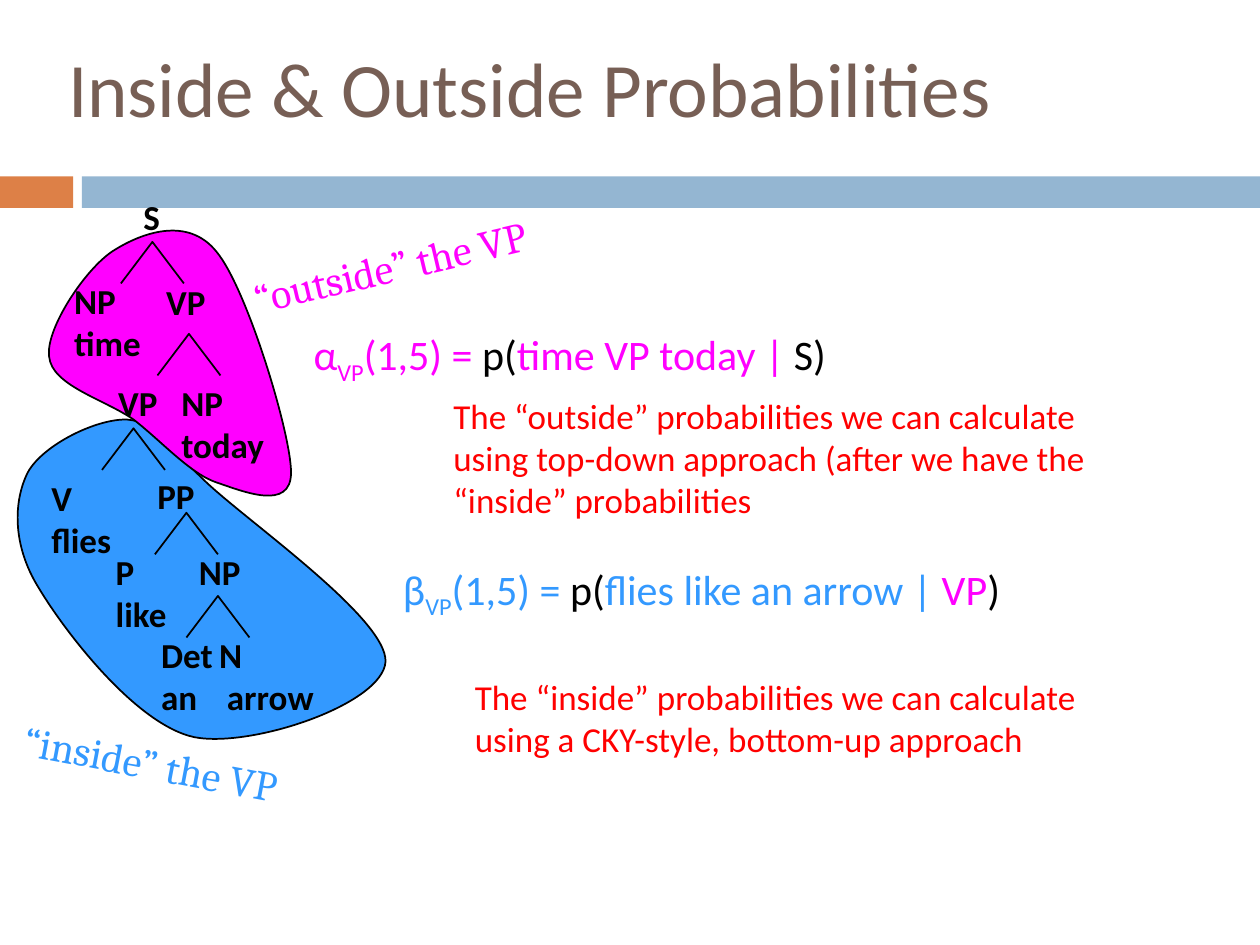
from collections import namedtuple

from lxml.etree import SubElement
from pptx import Presentation
from pptx.dml.color import RGBColor
from pptx.enum.shapes import MSO_SHAPE as Preset
from pptx.enum.text import MSO_ANCHOR, MSO_AUTO_SIZE as AutoSize, PP_ALIGN
from pptx.oxml.ns import qn
from pptx.util import Inches, Pt

# Grid: 100 columns by 75 rows of a tenth of an inch
COLS, ROWS, CELL = 100, 75, 0.1
COLOURS = {
    "title": "775F55", "accent": "DD8047", "band": "94B6D2",
    "inside": "3399FF", "outside": "FF00FF", "note": "FF0000", "ink": "000000",
}
BODY, LABEL = "Calibri", "Cambria"
BRANCH_W, BRANCH_H = 5, 3.3

Box = namedtuple("Box", "left top width height")


def rgb(name):
    return RGBColor.from_string(COLOURS[name])


def cells(count):
    return Inches(count * CELL)


def within(box, left, top, width, height):
    """Place a part in a box, all in grid cells."""
    return [cells(n) for n in (box.left + left, box.top + top, width, height)]


def set_font(font, size, colour=None, name=BODY, bold=False):
    font.name, font.size, font.bold = name, Pt(size), bold
    if colour:
        font.color.rgb = rgb(colour)


def add_text(slide, place, lines, size, colour=None, name=BODY,
             bold=False, wrap=False, angle=0):
    text_box = slide.shapes.add_textbox(*place)
    text_box.rotation = angle
    frame = text_box.text_frame
    frame.word_wrap = wrap
    frame.auto_size = AutoSize.SHAPE_TO_FIT_TEXT
    frame.text = lines
    for paragraph in frame.paragraphs:
        set_font(paragraph.font, size, colour, name, bold)
    return frame


def add_outline(slide, box, points, fill=None):
    """Draw a closed filled outline, or an open line when there is no fill."""
    placed = [(cells(box.left + x), cells(box.top + y)) for x, y in points]
    builder = slide.shapes.build_freeform(*placed[0])
    builder.add_line_segments(placed[1:], close=fill is not None)
    outline = builder.convert_to_shape()
    outline.shadow.inherit = False
    outline.line.color.rgb = rgb("ink")
    outline.line.width = Pt(1)
    if fill:
        outline.fill.solid()
        outline.fill.fore_color.rgb = rgb(fill)
    else:
        outline.fill.background()
    return outline


def round_off(outline):
    """Turn each three straight segments into one cubic curve."""
    segments = list(outline._element.iter(qn("a:lnTo")))
    track = segments[0].getparent()
    close = track.find(qn("a:close"))
    for first in range(0, len(segments), 3):
        curve = SubElement(track, qn("a:cubicBezTo"))
        for segment in segments[first:first + 3]:
            curve.append(segment[0])
            track.remove(segment)
    track.append(close)


def add_header(slide, box):
    # Two-colour band
    accent_w, band_left, band_h = 5.8, 6.5, 2.5
    for left, width, colour in ((0, accent_w, "accent"),
                                (band_left, box.width - band_left, "band")):
        bar = slide.shapes.add_shape(
            Preset.RECTANGLE, *within(box, left, box.height - band_h, width, band_h))
        bar.shadow.inherit = False
        bar.fill.solid()
        bar.fill.fore_color.rgb = rgb(colour)
        bar.line.fill.background()

    # Title
    title = slide.shapes.title
    title.left, title.top, title.width, title.height = within(box, 4.4, 0.6, 93.1, 12.5)
    frame = title.text_frame
    frame.text = "Inside & Outside Probabilities"
    frame.vertical_anchor = MSO_ANCHOR.MIDDLE
    frame.paragraphs[0].alignment = PP_ALIGN.LEFT
    set_font(frame.paragraphs[0].font, 44, "title")


def add_parse_tree(slide, box):
    # Regions inside and outside the lower VP: a start, then three points a curve
    regions = (
        ("inside", [
            (10.1, 18.3),
            (7.7, 18.2), (3.4, 20.3), (2.2, 22.5),
            (1.1, 24.7), (0.9, 28.2), (3.1, 31.7),
            (5.2, 35.2), (10.8, 42.5), (15.4, 43.5),
            (19.9, 44.4), (30.4, 40.9), (30.6, 37.5),
            (30.7, 34.1), (19.8, 26.5), (16.4, 23.3),
            (13, 20.1), (12.4, 18.5), (10.1, 18.3)]),
        ("outside", [
            (17.2, 23.3),
            (19.3, 24), (23.1, 25.6), (23.1, 22.5),
            (23.1, 19.4), (19.6, 7.9), (17.2, 5),
            (14.9, 2.1), (11.2, 3.5), (9, 4.9),
            (6.8, 6.3), (3.6, 11.1), (3.9, 13.3),
            (4.1, 15.6), (8.3, 16.7), (10.6, 18.3),
            (12.8, 20), (15.1, 22.6), (17.2, 23.3)]),
    )
    for colour, points in regions:
        round_off(add_outline(slide, box, points, colour))

    # Branches, each given by its apex
    for x, y in ((12.1, 4.2), (15, 11.5), (10.6, 19), (14.8, 25.7), (17.3, 32.3)):
        add_outline(slide, box, [(x - BRANCH_W / 2, y + BRANCH_H), (x, y),
                                 (x + BRANCH_W / 2, y + BRANCH_H)])

    # Nodes, with their words below
    nodes = (
        ("S", 10.4, 0, 3.8), ("NP\ntime", 4.9, 6.7, 8.3), ("VP", 12.2, 6.8, 5.7),
        ("VP", 8.4, 14.8, 5.7), ("NP\ntoday", 13.4, 14.8, 9.9),
        ("V\nflies", 3.1, 22.3, 7.8), ("PP", 11.5, 22.2, 5.7),
        ("P\nlike", 8.2, 28.2, 7), ("NP", 14.8, 28.2, 6),
        ("Det\nan", 11.8, 34.8, 6.9), ("N\n arrow", 16.4, 34.8, 11.1),
    )
    for words, left, top, width in nodes:
        height = 7.7 if "\n" in words else 4.3
        add_text(slide, within(box, left, top, width, height), words, 20, "ink", bold=True)

    # Tilted region names
    for words, colour, left, top, width, angle in (
            ("“inside” the VP", "inside", 0.8, 43.3, 25.1, 10.7),
            ("“outside” the VP", "outside", 18.9, 3.3, 26.9, 346.8)):
        add_text(slide, within(box, left, top, width, 5), words, 24, colour,
                 name=LABEL, angle=angle)


def add_formula(slide, place, parts):
    frame = add_text(slide, place, "", 24)
    for index, (words, colour) in enumerate(parts):
        run = frame.paragraphs[0].add_run()
        run.text = words
        run.font.color.rgb = rgb(colour)
        if index == 1:  # subscript
            run.font._element.set("baseline", "-25000")


def add_explanations(slide, box):
    # Outside probability
    add_formula(slide, within(box, 0, 0, 48.5, 5), (
        ("α", "outside"), ("VP", "outside"), ("(1,5) = ", "outside"), ("p(", "ink"),
        ("time VP today | ", "outside"), ("S)", "ink")))
    add_text(slide, within(box, 11.1, 5.2, 54.4, 11.1),
             "The “outside” probabilities we can calculate using top-down approach "
             "(after we have the “inside” probabilities", 20, "note", wrap=True)

    # Inside probability
    add_formula(slide, within(box, 7.1, 18.6, 55.7, 5), (
        ("β", "inside"), ("VP", "inside"), ("(1,5) = ", "inside"), ("p(", "ink"),
        ("flies like an arrow | ", "inside"), ("VP", "outside"), (")", "ink")))
    add_text(slide, within(box, 12.8, 27.5, 54.4, 7.7),
             "The “inside” probabilities we can calculate using a CKY-style, "
             "bottom-up approach", 20, "note", wrap=True)


def main():
    deck = Presentation()
    deck.slide_width, deck.slide_height = cells(COLS), cells(ROWS)
    slide = deck.slides.add_slide(deck.slide_layouts[5])
    add_header(slide, Box(0, 0, COLS, 16.5))
    add_parse_tree(slide, Box(0, 15, 46, 50))
    add_explanations(slide, Box(23.9, 25.6, 68, 36))
    deck.save("out.pptx")


if __name__ == "__main__":
    main()
